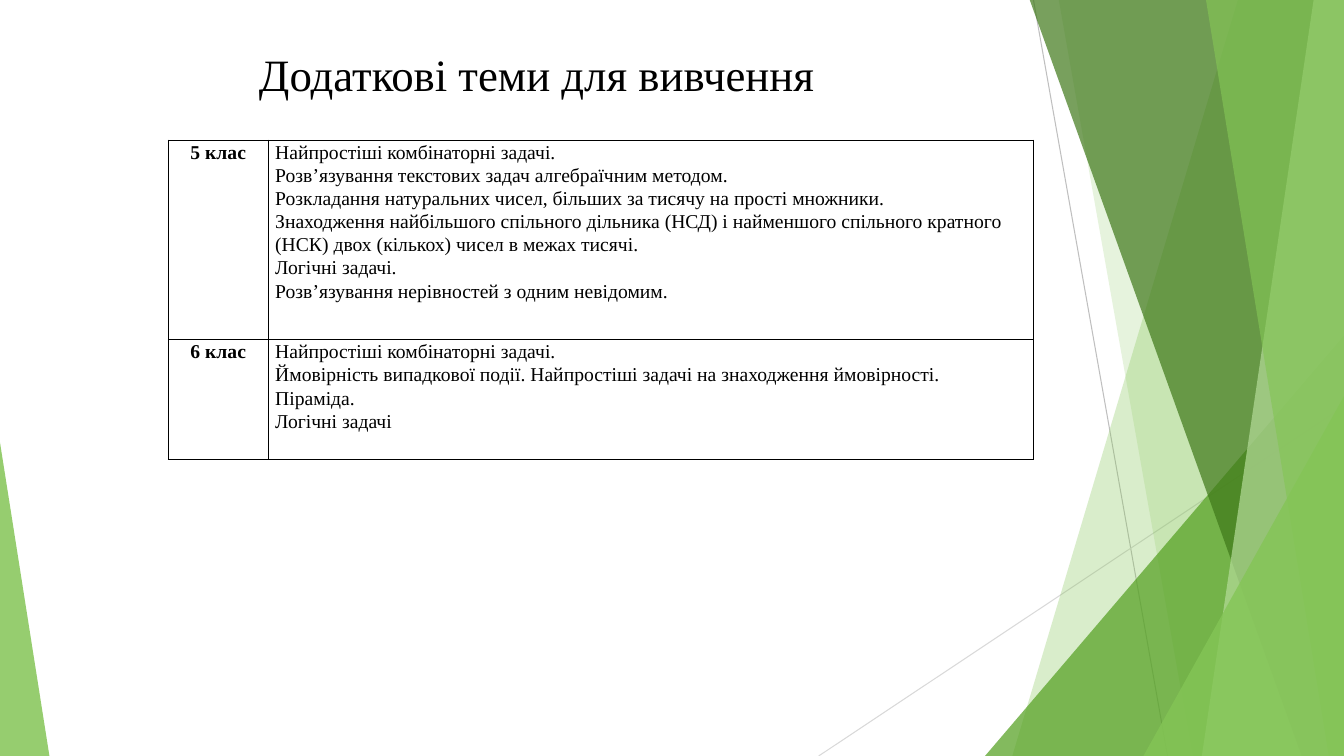
from pptx import Presentation
from pptx.dml.color import RGBColor
from pptx.enum.shapes import MSO_CONNECTOR as Connector, MSO_SHAPE as Shape
from pptx.enum.text import MSO_AUTO_SIZE as AutoSize, PP_ALIGN as Align
from pptx.oxml.ns import qn
from pptx.util import Inches, Pt
from lxml.etree import SubElement

TITLE = "Додаткові теми для вивчення"
TOPICS = [
    ("5 клас", [
        "Найпростіші комбінаторні задачі.",
        "Розв’язування текстових задач алгебраїчним методом.",
        "Розкладання натуральних чисел, більших за тисячу на прості множники.",
        "Знаходження найбільшого спільного дільника (НСД) і найменшого спільного "
        "кратного (НСК) двох (кількох) чисел в межах тисячі.",
        "Логічні задачі.",
        "Розв’язування нерівностей з одним невідомим.",
    ]),
    ("6 клас", [
        "Найпростіші комбінаторні задачі.",
        "Ймовірність випадкової події. Найпростіші задачі на знаходження ймовірності.",
        "Піраміда.",
        "Логічні задачі",
    ]),
]
THEME = {
    "font": "Times New Roman", "title": 32, "body": 14, "spacing": 1.07,
    "text": "000000", "border": "000000",
    "gray": "BFBFBF", "silver": "D9D9D9",
    "light": "84C556", "green": "54A021", "dark": "3F7819", "pale": "B5DC9A",
}
WIDTH, HEIGHT, TOP = 13.33, 7.5, -0.01
COLUMNS, ROWS = (0.99, 7.59), (1.98, 1.19)
LINES = [((10.25, 0), (11.58, HEIGHT), "gray"), ((WIDTH, 4.03), (8.12, HEIGHT), "silver")]
BAND, TRIANGLE = "band", "triangle"
FACETS = [
    (BAND, (12.28, 10.04), "light", 30),
    (BAND, (10.5, 11.83), "light", 20),
    (TRIANGLE, (9.77, 3.33, 3.56, 1), "green", 72),
    (BAND, (10.21, 12.91), "dark", 70),
    (BAND, (13.03, 11.92), "pale", 70),
    (BAND, (11.96, 13.18), "light", 65),
    (TRIANGLE, (11.34, 3.93, 1.99, 1), "light", 80),
    (TRIANGLE, (0, 4.39, 0.49, 0), "light", 85),
]


def color(name):
    return RGBColor.from_string(THEME[name])


def add_line(slide, start, end, tint):
    line = slide.shapes.add_connector(
        Connector.STRAIGHT, *[Inches(value) for value in start + end])
    line.line.color.rgb = color(tint)
    line.line.width = Pt(0.75)
    SubElement(line._element.spPr, qn("a:effectLst"))


def add_band(slide, top_x, bottom_x):
    corners = [(top_x, TOP), (WIDTH, TOP), (WIDTH, HEIGHT), (bottom_x, HEIGHT)]
    points = [(Inches(x), Inches(y)) for x, y in corners]
    builder = slide.shapes.build_freeform(*points[0])
    builder.add_line_segments(points[1:], close=True)
    return builder.convert_to_shape()


def add_triangle(slide, left, top, width, apex):
    shape = slide.shapes.add_shape(
        Shape.ISOSCELES_TRIANGLE, Inches(left), Inches(top),
        Inches(width), Inches(HEIGHT - top))
    shape.adjustments[0] = apex
    return shape


def paint(shape, tint, opacity):
    shape.shadow.inherit = False
    shape.line.fill.background()
    shape.fill.solid()
    shape.fill.fore_color.rgb = color(tint)
    fill = shape._element.spPr.find(qn("a:solidFill"))
    SubElement(fill[0], qn("a:alpha"), val=str(opacity * 1000))


def write(frame, lines, size="body", bold=False, align=Align.LEFT, spacing=None):
    for index, text in enumerate(lines):
        paragraph = frame.add_paragraph() if index else frame.paragraphs[0]
        paragraph.alignment = align
        paragraph.line_spacing = spacing
        run = paragraph.add_run()
        run.text = text
        run.font.name = THEME["font"]
        run.font.size = Pt(THEME[size])
        run.font.bold = bold
        run.font.color.rgb = color("text")


def format_cell(cell):
    cell.margin_left = cell.margin_right = Inches(0.07)
    cell.margin_top = cell.margin_bottom = 0
    properties = cell._tc.get_or_add_tcPr()
    for side in ("lnL", "lnR", "lnT", "lnB"):
        border = SubElement(properties, qn(f"a:{side}"), w=str(Pt(1)))
        fill = SubElement(border, qn("a:solidFill"))
        SubElement(fill, qn("a:srgbClr"), val=THEME["border"])
    cell.fill.background()


def add_topics(slide):
    table = slide.shapes.add_table(
        len(ROWS), len(COLUMNS), Inches(1.67), Inches(1.39),
        Inches(sum(COLUMNS)), Inches(sum(ROWS))).table
    table.first_row = table.horz_banding = False
    for column, width in zip(table.columns, COLUMNS):
        column.width = Inches(width)
    for row, height, (grade, topics) in zip(table.rows, ROWS, TOPICS):
        row.height = Inches(height)
        for cell in row.cells:
            format_cell(cell)
        spacing = THEME["spacing"]
        write(row.cells[0].text_frame, [grade], bold=True, align=Align.CENTER, spacing=spacing)
        write(row.cells[1].text_frame, topics, spacing=spacing)


def main():
    presentation = Presentation()
    presentation.slide_width = Inches(WIDTH)
    presentation.slide_height = Inches(HEIGHT)
    slide = presentation.slides.add_slide(presentation.slide_layouts[6])
    for start, end, tint in LINES:
        add_line(slide, start, end, tint)
    builders = {BAND: add_band, TRIANGLE: add_triangle}
    for kind, geometry, tint, opacity in FACETS:
        paint(builders[kind](slide, *geometry), tint, opacity)
    title = slide.shapes.add_textbox(Inches(2.47), Inches(0.41), Inches(5.88), Inches(0.64))
    title.text_frame.word_wrap = False
    title.text_frame.auto_size = AutoSize.SHAPE_TO_FIT_TEXT
    write(title.text_frame, [TITLE], size="title")
    add_topics(slide)
    presentation.save("out.pptx")


if __name__ == "__main__":
    main()
